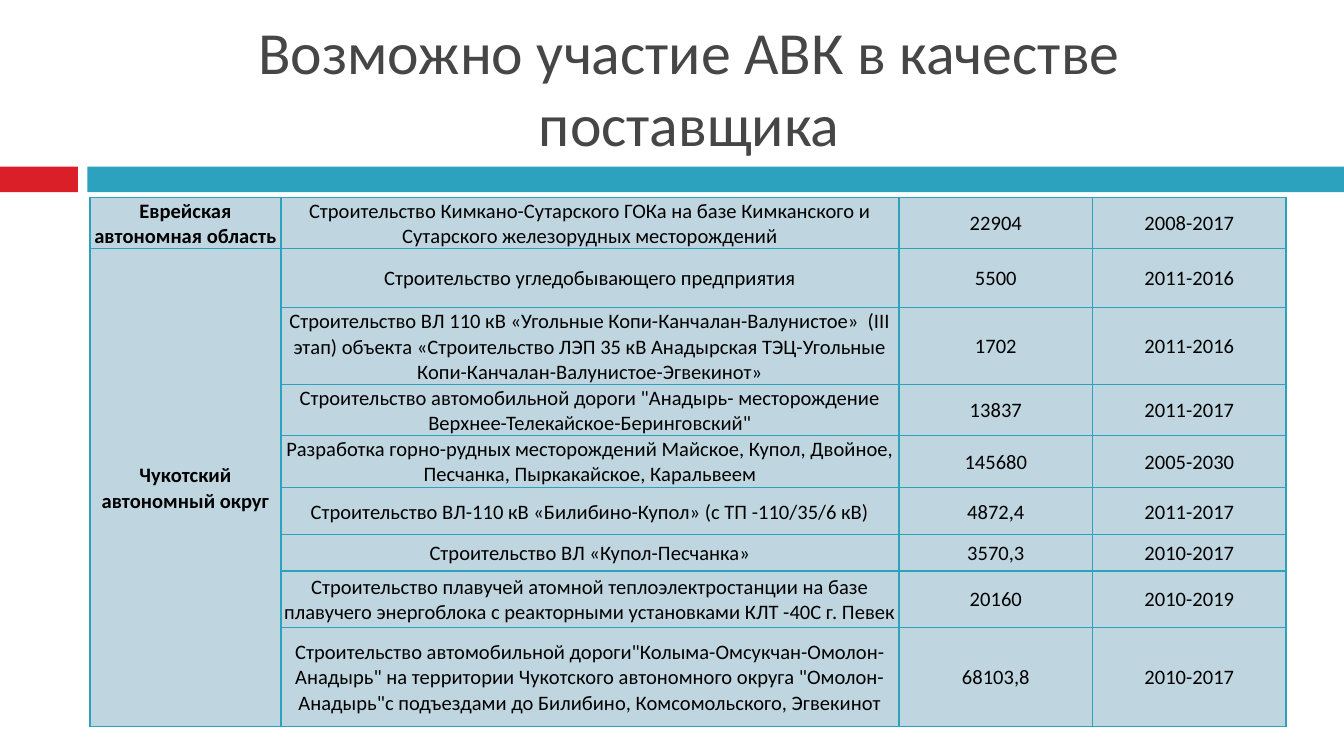
from lxml.etree import SubElement
from pptx import Presentation
from pptx.dml.color import RGBColor
from pptx.enum.shapes import MSO_SHAPE
from pptx.enum.text import MSO_ANCHOR, PP_ALIGN
from pptx.oxml.ns import qn
from pptx.util import Inches, Pt

RED = RGBColor(0xDA, 0x1F, 0x28)
TEAL = RGBColor(0x2D, 0xA2, 0xBF)
PALE_BLUE = RGBColor(0xBF, 0xD6, 0xE0)
GREY = RGBColor(0x46, 0x46, 0x46)
BLACK = RGBColor(0, 0, 0)

SLIDE_WIDTH = Inches(10)
SLIDE_SIZE = {"slide_width": SLIDE_WIDTH, "slide_height": SLIDE_WIDTH * 9 // 16}
TITLE_FONT = {"name": "Calibri", "size": Pt(32), "bold": False}
CELL_FONT = {"name": "Calibri", "size": Pt(11)}
CELL_FORMAT = {
    "vertical_anchor": MSO_ANCHOR.MIDDLE,
    "margin_left": Inches(0.01),
    "margin_right": Inches(0.01),
    "margin_top": Inches(0.01),
    "margin_bottom": 0,
}

COLUMN_WIDTHS = [1.42, 4.6, 1.44, 1.44]
ROW_HEIGHTS = [0.38, 0.44, 0.57, 0.38, 0.39, 0.35, 0.27, 0.42, 0.74]
PROJECTS = [
    ("Еврейская автономная область",
     "Строительство Кимкано-Сутарского ГОКа на базе Кимканского и Сутарского железорудных месторождений",
     "22904", "2008-2017"),
    ("Чукотский автономный округ", "Строительство угледобывающего предприятия", "5500", "2011-2016"),
    ("", "Строительство ВЛ 110 кВ «Угольные Копи-Канчалан-Валунистое»  (III этап) объекта "
     "«Строительство ЛЭП 35 кВ Анадырская ТЭЦ-Угольные Копи-Канчалан-Валунистое-Эгвекинот»",
     "1702", "2011-2016"),
    ("", 'Строительство автомобильной дороги "Анадырь- месторождение Верхнее-Телекайское-Беринговский"',
     "13837", "2011-2017"),
    ("", "Разработка горно-рудных месторождений Майское, Купол, Двойное, Песчанка, Пыркакайское, Каральвеем",
     "145680", "2005-2030"),
    ("", "Строительство ВЛ-110 кВ «Билибино-Купол» (с ТП -110/35/6 кВ)", "4872,4", "2011-2017"),
    ("", "Строительство ВЛ «Купол-Песчанка»", "3570,3", "2010-2017"),
    ("", "Строительство плавучей атомной теплоэлектростанции на базе плавучего энергоблока "
     "с реакторными установками КЛТ -40С г. Певек", "20160", "2010-2019"),
    ("", 'Строительство автомобильной дороги"Колыма-Омсукчан-Омолон-Анадырь" на территории '
     'Чукотского автономного округа "Омолон- Анадырь"с подъездами до Билибино, Комсомольского, Эгвекинот',
     "68103,8", "2010-2017"),
]


def apply_format(target, values):
    for attribute, value in values.items():
        setattr(target, attribute, value)


def write_centred(frame, text, font, color):
    paragraph = frame.paragraphs[0]
    paragraph.alignment = PP_ALIGN.CENTER
    run = paragraph.add_run()
    run.text = text
    apply_format(run.font, font)
    run.font.color.rgb = color


def add_divider(slide, left, top, width, height):
    accent_width, gap = 0.58, 0.07
    main_left = accent_width + gap
    for offset, length, color in [(0, accent_width, RED), (main_left, width - main_left, TEAL)]:
        band = slide.shapes.add_shape(
            MSO_SHAPE.RECTANGLE, Inches(left + offset), Inches(top), Inches(length), Inches(height))
        band.shadow.inherit = False
        band.fill.solid()
        band.fill.fore_color.rgb = color
        band.line.fill.background()


def add_title(slide, left, top, width, height):
    title = slide.shapes.add_textbox(Inches(left), Inches(top), Inches(width), Inches(height))
    apply_format(title.text_frame, {"word_wrap": True, "vertical_anchor": MSO_ANCHOR.BOTTOM})
    write_centred(title.text_frame, "Возможно участие АВК в качестве поставщика", TITLE_FONT, GREY)


def add_borders(cell):
    properties = cell._tc.get_or_add_tcPr()
    for side in ("lnL", "lnR", "lnT", "lnB"):
        border = SubElement(properties, qn(f"a:{side}"), w=str(Pt(0.79)))
        fill = SubElement(border, qn("a:solidFill"))
        SubElement(fill, qn("a:srgbClr"), val=str(TEAL))


def add_projects_table(slide, left, top, width, height):
    table = slide.shapes.add_table(
        len(PROJECTS), len(COLUMN_WIDTHS),
        Inches(left), Inches(top), Inches(width), Inches(height)).table
    apply_format(table, {"first_row": False, "horz_banding": False})
    for column, column_width in zip(table.columns, COLUMN_WIDTHS):
        column.width = Inches(column_width)
    for row, row_height in zip(table.rows, ROW_HEIGHTS):
        row.height = Inches(row_height)
    for row, project in zip(table.rows, PROJECTS):
        for index, (cell, text) in enumerate(zip(row.cells, project)):
            add_borders(cell)
            apply_format(cell, CELL_FORMAT)
            cell.fill.solid()
            cell.fill.fore_color.rgb = PALE_BLUE
            if text:
                write_centred(cell.text_frame, text, {**CELL_FONT, "bold": index == 0}, BLACK)
    table.cell(1, 0).merge(table.cell(len(PROJECTS) - 1, 0))


def main():
    presentation = Presentation()
    apply_format(presentation, SLIDE_SIZE)
    slide = presentation.slides.add_slide(presentation.slide_layouts[6])
    add_divider(slide, 0, 1.24, 10, 0.19)
    add_title(slide, 0.67, 0.13, 8.92, 1.1)
    add_projects_table(slide, 0.67, 1.47, sum(COLUMN_WIDTHS), sum(ROW_HEIGHTS))
    presentation.save("out.pptx")


if __name__ == "__main__":
    main()
